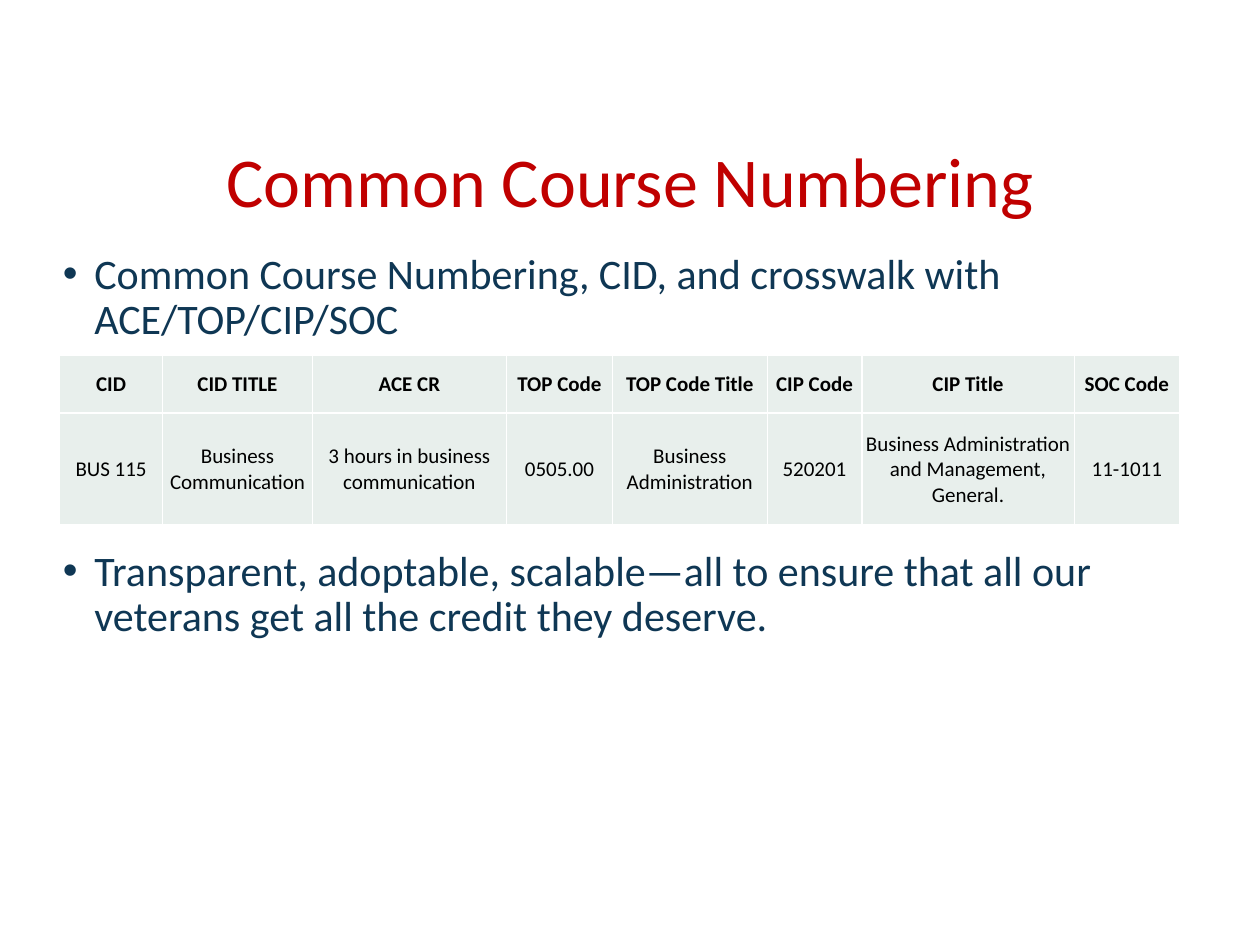
from lxml import etree
from pptx import Presentation
from pptx.dml.color import RGBColor
from pptx.enum.text import MSO_ANCHOR, PP_ALIGN
from pptx.oxml.ns import qn
from pptx.util import Pt

CENTER = PP_ALIGN.CENTER
MIDDLE = MSO_ANCHOR.MIDDLE
RED, NAVY, BLACK, WHITE, PALE = "C00000", "0F3754", "000000", "FFFFFF", "E8EFEC"


def add_text(para, text, size, color, bold=False):
    span = para.add_run()
    span.text = text
    span.font.name = "Calibri"
    span.font.size = Pt(size)
    span.font.bold = bold
    span.font.color.rgb = RGBColor.from_string(color)


def add_borders(cell, color, width):
    properties = cell._tc.get_or_add_tcPr()
    for side in ("lnL", "lnR", "lnT", "lnB"):
        line = etree.SubElement(properties, qn(f"a:{side}"), w=str(Pt(width)))
        fill = etree.SubElement(line, qn("a:solidFill"))
        etree.SubElement(fill, qn("a:srgbClr"), val=color)


deck = Presentation()
deck.slide_width, deck.slide_height = Pt(720), Pt(540)
page = deck.slides.add_slide(deck.slide_layouts[5])

# Title
title = page.shapes.title
title.left, title.top, title.width, title.height = Pt(0), Pt(80.64), Pt(720), Pt(50.4)
title.text_frame.vertical_anchor = MIDDLE
para = title.text_frame.paragraphs[0]
para.alignment = CENTER
para.line_spacing = 0.9
add_text(para, "Common Course Numbering", 40, RED)

# Bullets, with room for the table between them
bullets = [
    ("Common Course Numbering, CID, and crosswalk with ACE/TOP/CIP/SOC", 0),
    ("Transparent, adoptable, scalable—all to ensure that all our "
     "veterans get all the credit they deserve.", 118),
]
body = page.shapes.add_textbox(Pt(28.8), Pt(141.12), Pt(663.84), Pt(323.28))
frame = body.text_frame
frame.word_wrap = True
for index, (text, space_before) in enumerate(bullets):
    para = frame.add_paragraph() if index else frame.paragraphs[0]
    properties = para._p.get_or_add_pPr()
    properties.set("marL", str(Pt(18)))
    properties.set("indent", str(-Pt(18)))
    etree.SubElement(properties, qn("a:buFont"), typeface="Arial")
    etree.SubElement(properties, qn("a:buChar"), char="•")
    para.line_spacing = 0.9
    para.space_before = Pt(space_before)
    add_text(para, text, 24, NAVY)

# Crosswalk table
rows = [
    ["CID", "CID TITLE", "ACE CR", "TOP Code", "TOP Code Title",
     "CIP Code", "CIP Title", "SOC Code"],
    ["BUS 115", "Business Communication", "3 hours in business communication",
     "0505.00", "Business Administration", "520201",
     "Business Administration and Management, General.", "11-1011"],
]
column_widths = [59, 85.5, 111, 60.5, 88.5, 54, 121.5, 60]
row_heights = [33, 64]
table = page.shapes.add_table(
    len(rows), len(column_widths), Pt(34), Pt(203),
    Pt(sum(column_widths)), Pt(sum(row_heights))).table
for column, width in zip(table.columns, column_widths):
    column.width = Pt(width)
for row_index, (texts, height) in enumerate(zip(rows, row_heights)):
    table.rows[row_index].height = Pt(height)
    for column_index, text in enumerate(texts):
        cell = table.cell(row_index, column_index)
        add_borders(cell, WHITE, 1)
        cell.fill.solid()
        cell.fill.fore_color.rgb = RGBColor.from_string(PALE)
        cell.vertical_anchor = MIDDLE
        cell.margin_left = cell.margin_right = cell.margin_top = Pt(0.7)
        cell.margin_bottom = Pt(0)
        para = cell.text_frame.paragraphs[0]
        para.alignment = CENTER
        add_text(para, text, 12, BLACK, bold=row_index == 0)

deck.save("out.pptx")
